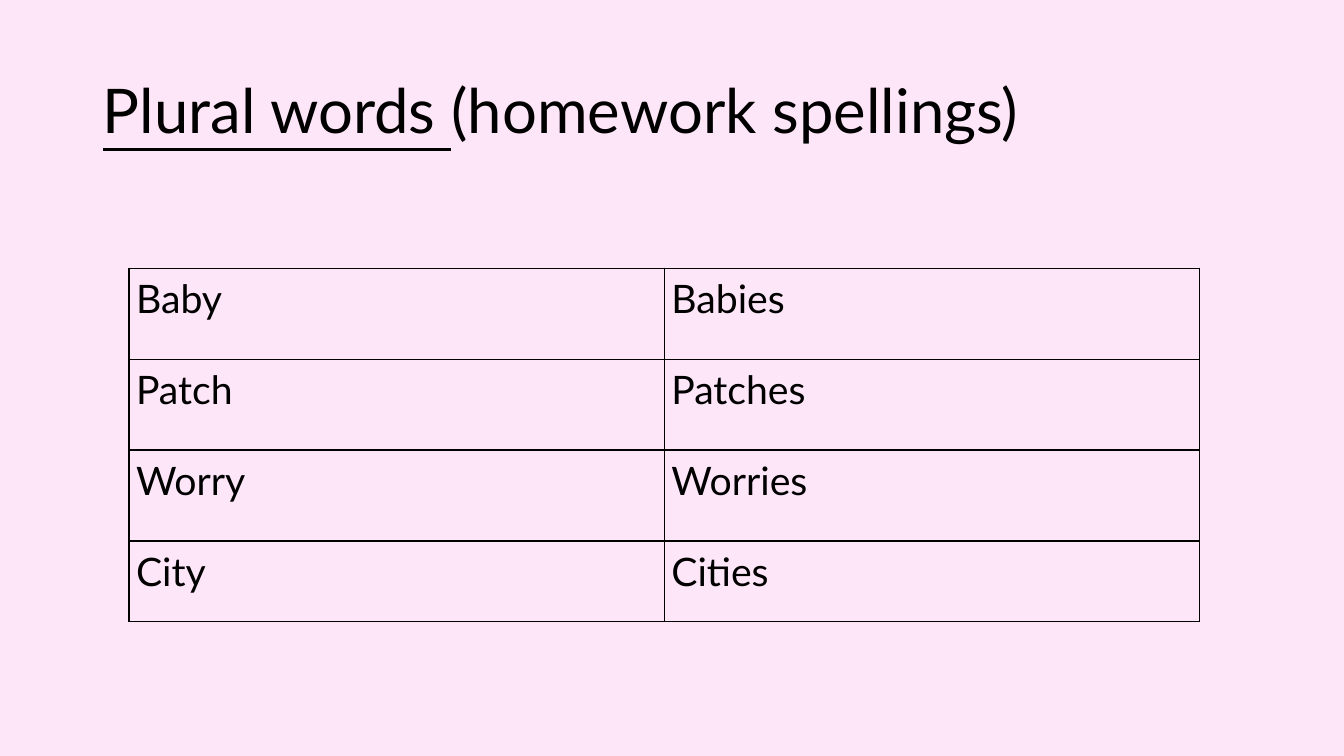
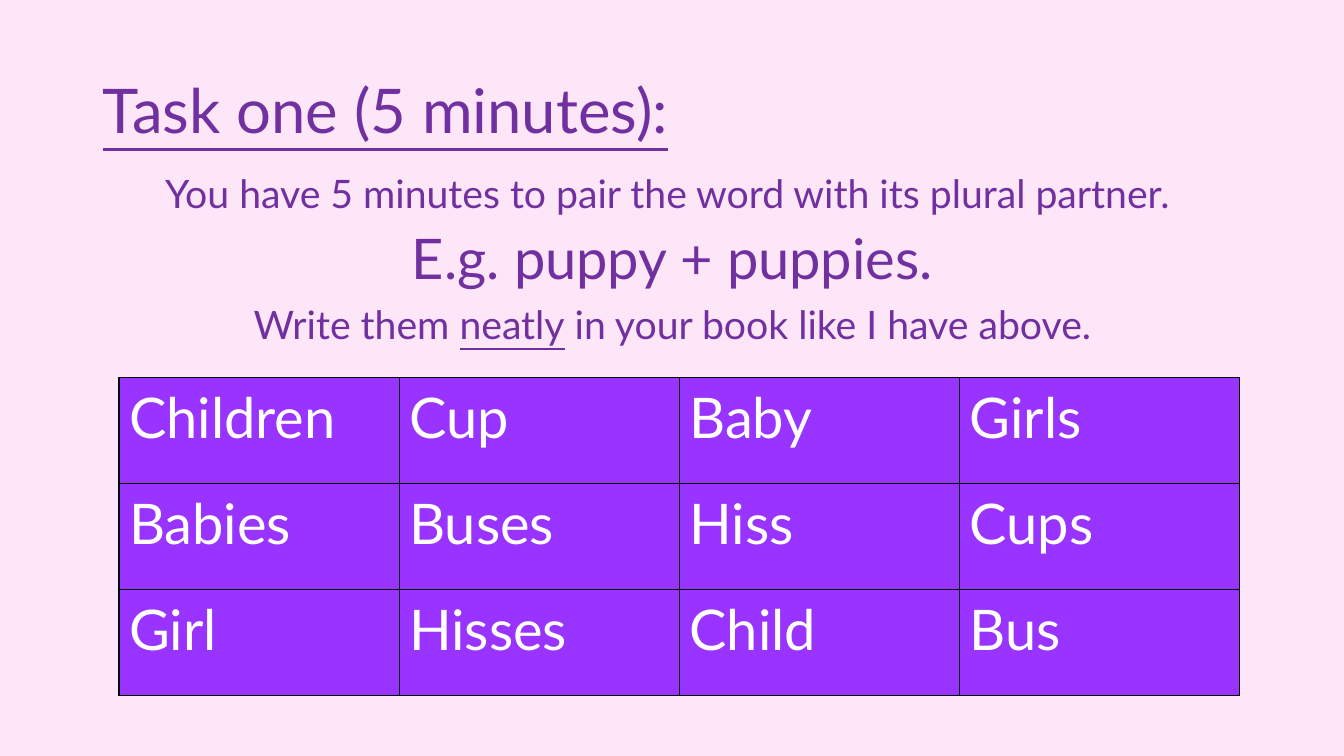
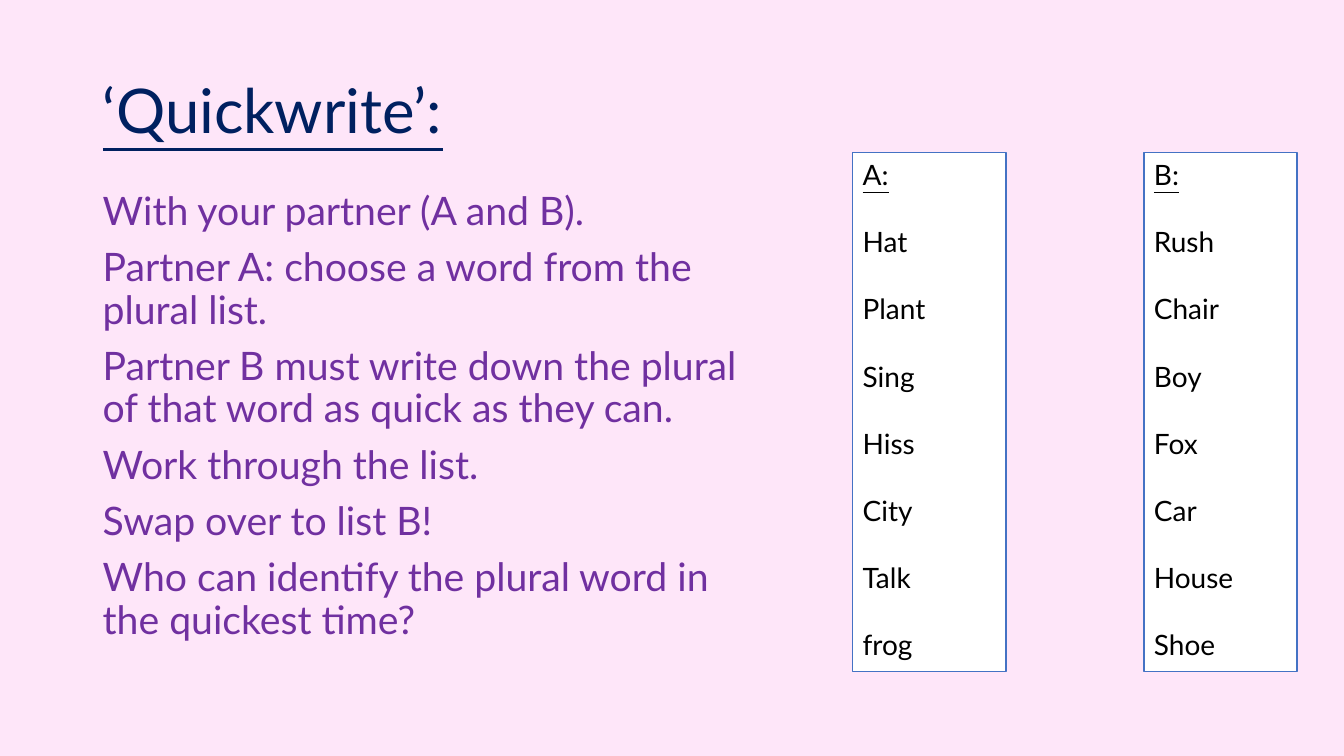
from dataclasses import dataclass

from lxml.etree import SubElement
from pptx import Presentation
from pptx.dml.color import RGBColor as Color
from pptx.enum.shapes import MSO_SHAPE as Shape
from pptx.enum.text import MSO_ANCHOR as Anchor, MSO_AUTO_SIZE as AutoSize, PP_ALIGN as Align
from pptx.oxml.ns import qn
from pptx.util import Cm, Pt


@dataclass(frozen=True)
class Theme:
    font: str = "Lato"
    background: Color = Color.from_string("FEE6F9")
    black: Color = Color.from_string("000000")
    white: Color = Color.from_string("FFFFFF")
    purple: Color = Color.from_string("7030A0")
    violet: Color = Color.from_string("9933FF")
    navy: Color = Color.from_string("002060")
    blue: Color = Color.from_string("4472C4")
    title_size: int = 44
    large_size: int = 40
    body_size: int = 28
    list_size: int = 20


THEME = Theme()
TITLE_ONLY = 5
MARGIN = Cm(2.34)
CONTENT_WIDTH = Cm(29.21)


def format_paragraph(paragraph, size, color):
    font = paragraph.font
    font.name, font.size, font.color.rgb = THEME.font, Pt(size), color


def add_runs(paragraph, text):
    """Add text whose odd parts between | marks are underlined."""
    for index, part in enumerate(text.split("|")):
        if part:
            run = paragraph.add_run()
            run.text = part
            run.font.underline = index % 2 == 1


def add_titled_slide(presentation, text, color):
    slide = presentation.slides.add_slide(presentation.slide_layouts[TITLE_ONLY])
    title = slide.shapes.title
    title.left, title.top, title.width, title.height = MARGIN, Cm(1.02), CONTENT_WIDTH, Cm(3.68)
    frame = title.text_frame
    frame.auto_size = AutoSize.NONE
    frame.vertical_anchor = Anchor.MIDDLE
    paragraph = frame.paragraphs[0]
    paragraph.alignment = Align.LEFT
    paragraph.line_spacing = 0.9
    add_runs(paragraph, text)
    format_paragraph(paragraph, THEME.title_size, color)
    return slide


def add_body(slide, lines, top, width, height, alignment=Align.LEFT):
    """Add a text box with one paragraph for each (text, size) pair."""
    frame = slide.shapes.add_textbox(MARGIN, top, width, height).text_frame
    frame.word_wrap = True
    for index, (text, size) in enumerate(lines):
        paragraph = frame.add_paragraph() if index else frame.paragraphs[0]
        paragraph.alignment = alignment
        paragraph.line_spacing = 0.9
        paragraph.space_before = Pt(10)
        add_runs(paragraph, text)
        format_paragraph(paragraph, size, THEME.purple)


def add_cell_borders(cell):
    properties = cell._tc.get_or_add_tcPr()
    for side in ("lnL", "lnR", "lnT", "lnB"):
        line = SubElement(properties, qn(f"a:{side}"), w=str(Pt(1)))
        fill = SubElement(line, qn("a:solidFill"))
        SubElement(fill, qn("a:srgbClr"), val=str(THEME.black))


def add_word_table(slide, words, left, top, column_width, row_heights, size, color, fill=None):
    columns = len(words[0])
    table = slide.shapes.add_table(
        len(words), columns, left, top, column_width * columns, sum(row_heights)
    ).table
    table.first_row = table.horz_banding = False
    for column in table.columns:
        column.width = column_width
    for row, height, row_words in zip(table.rows, row_heights, words):
        row.height = height
        for cell, word in zip(row.cells, row_words):
            cell.text = word
            format_paragraph(cell.text_frame.paragraphs[0], size, color)
            add_cell_borders(cell)
            if fill is None:
                cell.fill.background()
            else:
                cell.fill.solid()
                cell.fill.fore_color.rgb = fill
    return table


def add_word_list(slide, heading, words, left):
    box = slide.shapes.add_shape(Shape.RECTANGLE, left, Cm(3.84), Cm(3.86), Cm(13.08))
    box.shadow.inherit = False
    box.fill.solid()
    box.fill.fore_color.rgb = THEME.white
    box.line.color.rgb = THEME.blue
    box.line.width = Pt(1)
    frame = box.text_frame
    frame.word_wrap = True
    frame.vertical_anchor = Anchor.TOP
    for index, text in enumerate([f"|{heading}|", *words]):
        paragraph = frame.add_paragraph() if index else frame.paragraphs[0]
        paragraph.alignment = Align.LEFT
        paragraph.space_before = Pt(24 if index else 0)
        add_runs(paragraph, text)
        format_paragraph(paragraph, THEME.list_size, THEME.black)


def add_spellings_slide(presentation):
    slide = add_titled_slide(presentation, "|Plural words |(homework spellings)", THEME.black)
    words = [("Baby", "Babies"), ("Patch", "Patches"), ("Worry", "Worries"), ("City", "Cities")]
    heights = [Cm(2.29)] * 3 + [Cm(2.03)]
    table = add_word_table(slide, words, Cm(3.25), Cm(6.76), Cm(13.49), heights,
                           THEME.body_size, THEME.black)
    for cell in table.iter_cells():
        cell.margin_left = cell.margin_right = Cm(0.18)
        cell.margin_top = cell.margin_bottom = 0
        paragraph = cell.text_frame.paragraphs[0]
        paragraph.line_spacing = 1.15
        paragraph.space_after = Pt(10)


def add_pairing_slide(presentation):
    slide = add_titled_slide(presentation, "|Task one (5 minutes):|", THEME.purple)
    lines = [
        ("You have 5 minutes to pair the word with its plural partner. ", THEME.body_size),
        ("E.g. puppy + puppies.", THEME.large_size),
        ("Write them |neatly| in your book like I have above.", THEME.body_size),
    ]
    add_body(slide, lines, Cm(4.27), CONTENT_WIDTH, Cm(12.9), Align.CENTER)
    words = [
        ("Children", "Cup", "Baby", "Girls"),
        ("Babies", "Buses", "Hiss", "Cups"),
        ("Girl", "Hisses", "Child", "Bus"),
    ]
    add_word_table(slide, words, Cm(3), Cm(9.52), Cm(7.06), [Cm(2.67)] * 3,
                   THEME.large_size, THEME.white, THEME.violet)


def add_quickwrite_slide(presentation):
    slide = add_titled_slide(presentation, "|‘Quickwrite’:|", THEME.navy)
    steps = [
        "With your partner (A and B).",
        "Partner A: choose a word from the plural list.",
        "Partner B must write down the plural of that word as quick as they can.",
        "Work through the list.",
        "Swap over to list B!",
        "Who can identify the plural word in the quickest time?",
    ]
    add_body(slide, [(step, THEME.body_size) for step in steps], Cm(4.7), Cm(16.87), Cm(12.09))
    add_word_list(slide, "A:", ["Hat", "Plant", "Sing", "Hiss", "City", "Talk", "frog"], Cm(21.49))
    add_word_list(slide, "B:", ["Rush", "Chair", "Boy", "Fox", "Car", "House", "Shoe"], Cm(28.83))


def main():
    presentation = Presentation()
    presentation.slide_width, presentation.slide_height = Cm(33.87), Cm(19.05)
    background = presentation.slide_master.background.fill
    background.solid()
    background.fore_color.rgb = THEME.background
    add_spellings_slide(presentation)
    add_pairing_slide(presentation)
    add_quickwrite_slide(presentation)
    presentation.save("out.pptx")


if __name__ == "__main__":
    main()
